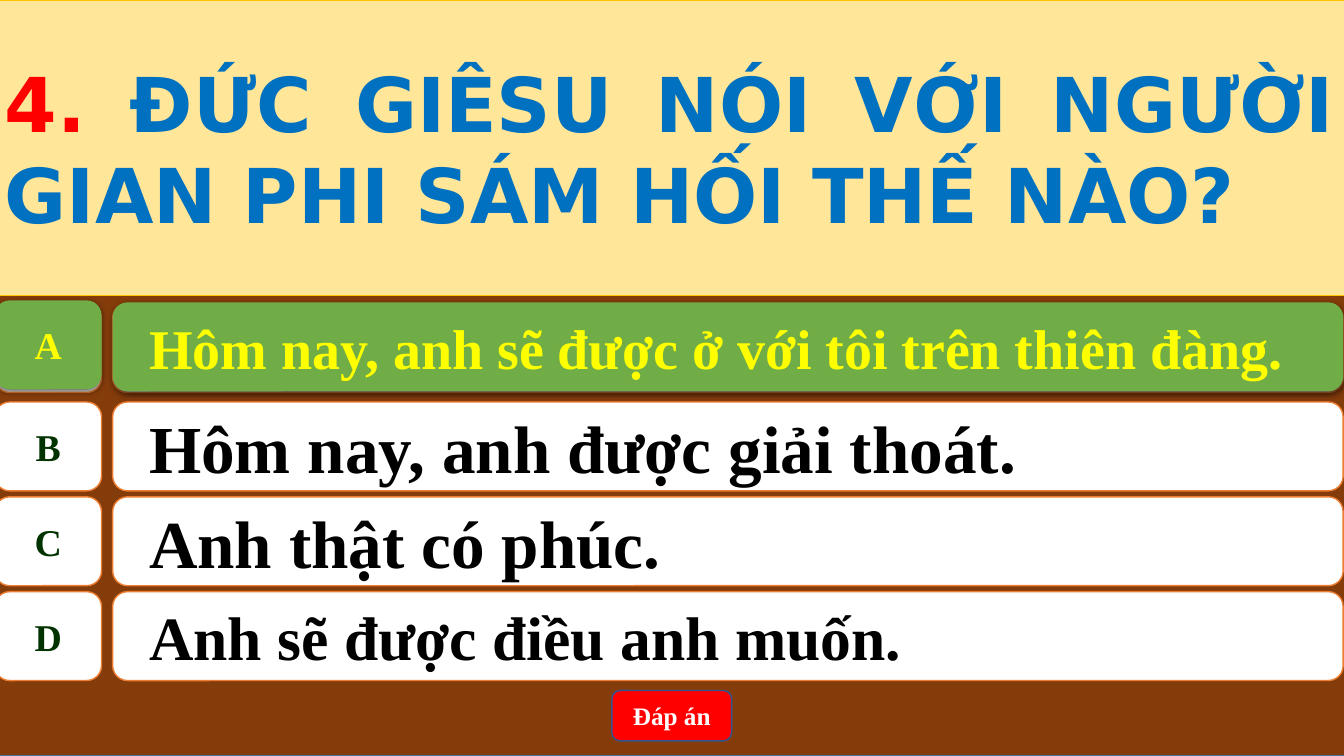
from lxml.etree import SubElement
from pptx import Presentation
from pptx.dml.color import RGBColor
from pptx.enum.shapes import MSO_SHAPE as Shape
from pptx.enum.text import MSO_ANCHOR as Anchor, MSO_AUTO_SIZE as AutoSize, PP_ALIGN as Align
from pptx.oxml.ns import qn
from pptx.util import Cm, Pt

COLORS = {
    "brown": "843C0B", "blue_line": "43739E", "white": "FFFFFF",
    "orange": "ED7D31", "dark_green": "003300", "black": "000000",
    "green": "70AD47", "yellow": "FFFF00", "red": "FF0000",
    "button_line": "325491", "cream": "FFE699", "gold": "FFC000",
    "blue": "0070C0",
}
SERIF = "Times New Roman"
SANS = "DejaVu Sans"

LEFT = -0.13
FULL_WIDTH = 34.01
LABEL_WIDTH = 2.69
ANSWER_LEFT, ANSWER_WIDTH = 2.84, 31.01
ROW_HEIGHT = 2.24
FIRST_TOP, SECOND_TOP, ROW_PITCH = 7.65, 10.13, 2.39

ANSWERS = [
    ("A", "Hôm nay, anh sẽ được ở với tôi trên thiên đàng.", 40),
    ("B", "Hôm nay, anh được giải thoát.", 48),
    ("C", "Anh thật có phúc.", 48),
    ("D", "Anh sẽ được điều anh muốn.", 44),
]


def color(name):
    return RGBColor.from_string(COLORS[name])


def paint(shape, fill, line=None, width=1):
    shape.fill.solid()
    shape.fill.fore_color.rgb = color(fill)
    if line:
        shape.line.color.rgb = color(line)
        shape.line.width = Pt(width)
    else:
        shape.line.fill.background()


def add_box(slide, kind, left, top, width, height, fill, line=None):
    shape = slide.shapes.add_shape(kind, Cm(left), Cm(top), Cm(width), Cm(height))
    shape.shadow.inherit = False
    paint(shape, fill, line)
    return shape


def add_shadow(shape):
    """Give the shape a soft black shadow that falls straight down."""
    effects = shape._element.spPr.find(qn("a:effectLst"))
    shadow = SubElement(effects, qn("a:outerShdw"), blurRad=str(Pt(4.5)),
                        dist=str(Pt(1.5)), dir="5400000", algn="ctr", rotWithShape="0")
    black = SubElement(shadow, qn("a:srgbClr"), val=COLORS["black"])
    SubElement(black, qn("a:alpha"), val="63000")


def write(shape, text, size, ink, font=SERIF, align=Align.CENTER, wrap=True):
    """Append bold text to the first paragraph of the shape."""
    frame = shape.text_frame
    frame.word_wrap = wrap
    frame.vertical_anchor = Anchor.MIDDLE
    paragraph = frame.paragraphs[0]
    paragraph.alignment = align
    run = paragraph.add_run()
    run.text = text
    run.font.name = font
    run.font.size = Pt(size)
    run.font.bold = True
    run.font.color.rgb = color(ink)
    return paragraph


def add_answer(slide, letter, text, size, label_top, answer_top, correct=False):
    fill, line = ("green", None) if correct else ("white", "orange")
    label = add_box(slide, Shape.FLOWCHART_ALTERNATE_PROCESS, LEFT, label_top,
                    LABEL_WIDTH, ROW_HEIGHT, fill, line)
    write(label, letter, 27, "yellow" if correct else "dark_green", wrap=False)
    answer = add_box(slide, Shape.ROUNDED_RECTANGLE, ANSWER_LEFT, answer_top,
                     ANSWER_WIDTH, ROW_HEIGHT, fill, line)
    paragraph = write(answer, text, size, "yellow" if correct else "black", align=Align.LEFT)
    paragraph.level = 1
    properties = paragraph._p.get_or_add_pPr()
    properties.set("marL", str(Cm(1.27)))
    properties.set("indent", str(Cm(-0.71)))
    if correct:
        add_shadow(label)
        add_shadow(answer)


def format_question(slide):
    title = slide.shapes.title
    title.left, title.top = Cm(LEFT), Cm(0)
    title.width, title.height = Cm(FULL_WIDTH), Cm(7.44)
    paint(title, "cream", "gold", 0.5)
    title.text_frame.auto_size = AutoSize.NONE
    write(title, "4. ", 54, "red", font=SANS, align=Align.JUSTIFY)
    write(title, "ĐỨC GIÊSU NÓI VỚI NGƯỜI GIAN PHI SÁM HỐI THẾ NÀO?", 54, "blue",
          font=SANS, align=Align.JUSTIFY)
    # Bring the question in front of the backdrop
    slide.shapes._spTree.append(title._element)


def main():
    presentation = Presentation()
    presentation.slide_width, presentation.slide_height = Cm(33.87), Cm(19.05)
    slide = presentation.slides.add_slide(presentation.slide_layouts[5])

    add_box(slide, Shape.RECTANGLE, LEFT, 0, FULL_WIDTH, 19.05, "brown", "blue_line")
    for index, (letter, text, size) in enumerate(ANSWERS):
        top = SECOND_TOP + (index - 1) * ROW_PITCH if index else FIRST_TOP
        add_answer(slide, letter, text, size, top, top)
    add_answer(slide, *ANSWERS[0], 7.57, 7.62, correct=True)

    button = add_box(slide, Shape.ROUNDED_RECTANGLE, 15.42, 17.4, 3.02, 1.27,
                     "red", "button_line")
    write(button, "Đáp án", 18, "white")
    format_question(slide)
    presentation.save("out.pptx")


if __name__ == "__main__":
    main()
